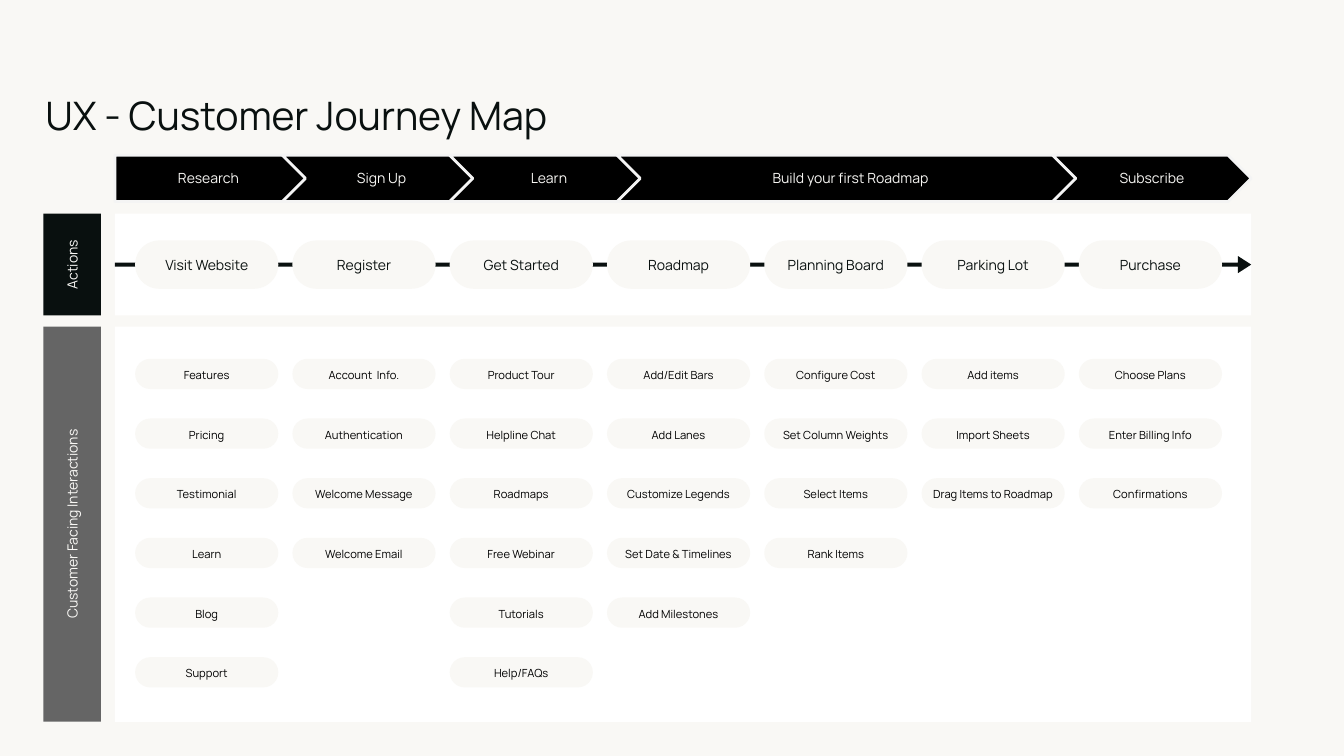
from dataclasses import dataclass

from pptx import Presentation
from pptx.dml.color import RGBColor
from pptx.enum.shapes import MSO_SHAPE
from pptx.enum.text import MSO_ANCHOR, MSO_AUTO_SIZE, PP_ALIGN
from pptx.util import Inches, Pt

ROUNDED = MSO_SHAPE.ROUNDED_RECTANGLE
CHEVRON = MSO_SHAPE.CHEVRON
PENTAGON = MSO_SHAPE.PENTAGON
DOWN_ARROW = MSO_SHAPE.DOWN_ARROW
MIDDLE, TOP = MSO_ANCHOR.MIDDLE, MSO_ANCHOR.TOP
CENTER, LEFT = PP_ALIGN.CENTER, PP_ALIGN.LEFT


@dataclass(frozen=True)
class Theme:
    font: str = "Manrope"
    paper: str = "F9F8F5"
    panel: str = "FFFFFF"
    ink: str = "09100F"
    black: str = "000000"
    gray: str = "656565"
    stage_edge: str = "F4F4F4"
    title_size: int = 28
    label_size: int = 10
    detail_size: int = 8


THEME = Theme()

# Grid in inches
PANEL_LEFT, PANEL_WIDTH = 1.14, 11.27
LANE_LEFT, LANE_WIDTH = 0.43, 0.57
ACTIONS_TOP, ACTIONS_HEIGHT = 2.12, 1.01
DETAILS_TOP, DETAILS_HEIGHT = 3.24, 3.92
COLUMN_LEFT, COLUMN_STEP, PILL_WIDTH = 1.34, 1.56, 1.42
ROW_TOP, ROW_STEP, DETAIL_HEIGHT = 3.56, 0.592, 0.3
ACTION_HEIGHT, ARROW_HEIGHT = 0.48, 0.17
STAGE_TOP, STAGE_HEIGHT, STAGE_OVERLAP = 1.54, 0.46, 0.31

STAGES = [
    ("Research", 1.97),
    ("Sign Up", 1.97),
    ("Learn", 1.97),
    ("Build your first Roadmap", 4.63),
    ("Subscribe", 1.97),
]
JOURNEY = {
    "Visit Website": ["Features", "Pricing", "Testimonial", "Learn", "Blog", "Support"],
    "Register": ["Account  Info.", "Authentication", "Welcome Message", "Welcome Email"],
    "Get Started": ["Product Tour", "Helpline Chat", "Roadmaps", "Free Webinar",
                    "Tutorials", "Help/FAQs"],
    "Roadmap": ["Add/Edit Bars", "Add Lanes", "Customize Legends",
                "Set Date & Timelines", "Add Milestones"],
    "Planning Board": ["Configure Cost", "Set Column Weights", "Select Items", "Rank Items"],
    "Parking Lot": ["Add items", "Import Sheets", "Drag Items to Roadmap"],
    "Purchase": ["Choose Plans", "Enter Billing Info", "Confirmations"],
}


def add_block(kind, left, top, width, height, fill, adjustments, turned=False):
    """Add a filled shape covering the visible box; turned shapes read bottom to top."""
    if turned:
        left, top = left + (width - height) / 2, top + (height - width) / 2
        width, height = height, width
    block = slide.shapes.add_shape(
        kind, Inches(left), Inches(top), Inches(width), Inches(height))
    block.rotation = 270 if turned else 0
    for index, value in enumerate(adjustments):
        block.adjustments[index] = value
    block.shadow.inherit = False
    block.fill.solid()
    block.fill.fore_color.rgb = RGBColor.from_string(fill)
    block.line.fill.background()
    return block


def write(holder, text, size, color, align=CENTER, anchor=MIDDLE):
    frame = holder.text_frame
    frame.word_wrap = True
    frame.vertical_anchor = anchor
    frame.margin_left = frame.margin_right = frame.margin_top = frame.margin_bottom = 0
    paragraph = frame.paragraphs[0]
    paragraph.alignment = align
    run = paragraph.add_run()
    run.text = text
    run.font.name = THEME.font
    run.font.size = Pt(size)
    run.font.color.rgb = RGBColor.from_string(color)
    return paragraph


prs = Presentation()
prs.slide_width, prs.slide_height = Inches(13.33), Inches(7.5)
slide = prs.slides.add_slide(prs.slide_layouts[5])
slide.background.fill.solid()
slide.background.fill.fore_color.rgb = RGBColor.from_string(THEME.paper)

title = slide.shapes.title
title.left, title.top = Inches(0.45), Inches(0.91)
title.width, title.height = Inches(9.23), Inches(0.51)
title.text_frame.auto_size = MSO_AUTO_SIZE.NONE
write(title, "UX - Customer Journey Map", THEME.title_size, THEME.ink, LEFT, TOP)

# Lanes: a white panel with a turned label on its left
lanes = [
    ("Actions", ACTIONS_TOP, ACTIONS_HEIGHT, THEME.ink),
    ("Customer Facing Interactions", DETAILS_TOP, DETAILS_HEIGHT, THEME.gray),
]
for lane, top, height, lane_color in lanes:
    add_block(ROUNDED, PANEL_LEFT, top, PANEL_WIDTH, height, THEME.panel, [0])
    lane_label = add_block(
        ROUNDED, LANE_LEFT, top, LANE_WIDTH, height, lane_color, [0], turned=True)
    write(lane_label, lane, THEME.label_size, THEME.paper)

# Stages: each tip reaches into the notch of the next
stage_left = PANEL_LEFT
for number, (stage, stage_width) in enumerate(STAGES):
    stage_arrow = add_block(
        CHEVRON if number else PENTAGON, stage_left, STAGE_TOP, stage_width,
        STAGE_HEIGHT, THEME.black, [0.5])
    stage_arrow.line.color.rgb = RGBColor.from_string(THEME.stage_edge)
    stage_arrow.line.width = Pt(2)
    write(stage_arrow, stage, THEME.label_size, THEME.paper)
    stage_left += stage_width - STAGE_OVERLAP

# Journey: the arrow runs behind the actions, with interactions listed below each
action_top = ACTIONS_TOP + (ACTIONS_HEIGHT - ACTION_HEIGHT) / 2
arrow_top = ACTIONS_TOP + (ACTIONS_HEIGHT - ARROW_HEIGHT) / 2
add_block(DOWN_ARROW, PANEL_LEFT, arrow_top, PANEL_WIDTH, ARROW_HEIGHT,
          THEME.ink, [0.243, 0.776], turned=True)
for column, (action, interactions) in enumerate(JOURNEY.items()):
    column_left = COLUMN_LEFT + column * COLUMN_STEP
    action_pill = add_block(
        ROUNDED, column_left, action_top, PILL_WIDTH, ACTION_HEIGHT, THEME.paper, [0.5])
    write(action_pill, action, THEME.label_size, THEME.ink)
    for row, interaction in enumerate(interactions):
        interaction_pill = add_block(
            ROUNDED, column_left, ROW_TOP + row * ROW_STEP, PILL_WIDTH,
            DETAIL_HEIGHT, THEME.paper, [0.5])
        line = write(interaction_pill, interaction, THEME.detail_size, THEME.black)
        line.line_spacing = 1.15

prs.save("out.pptx")
